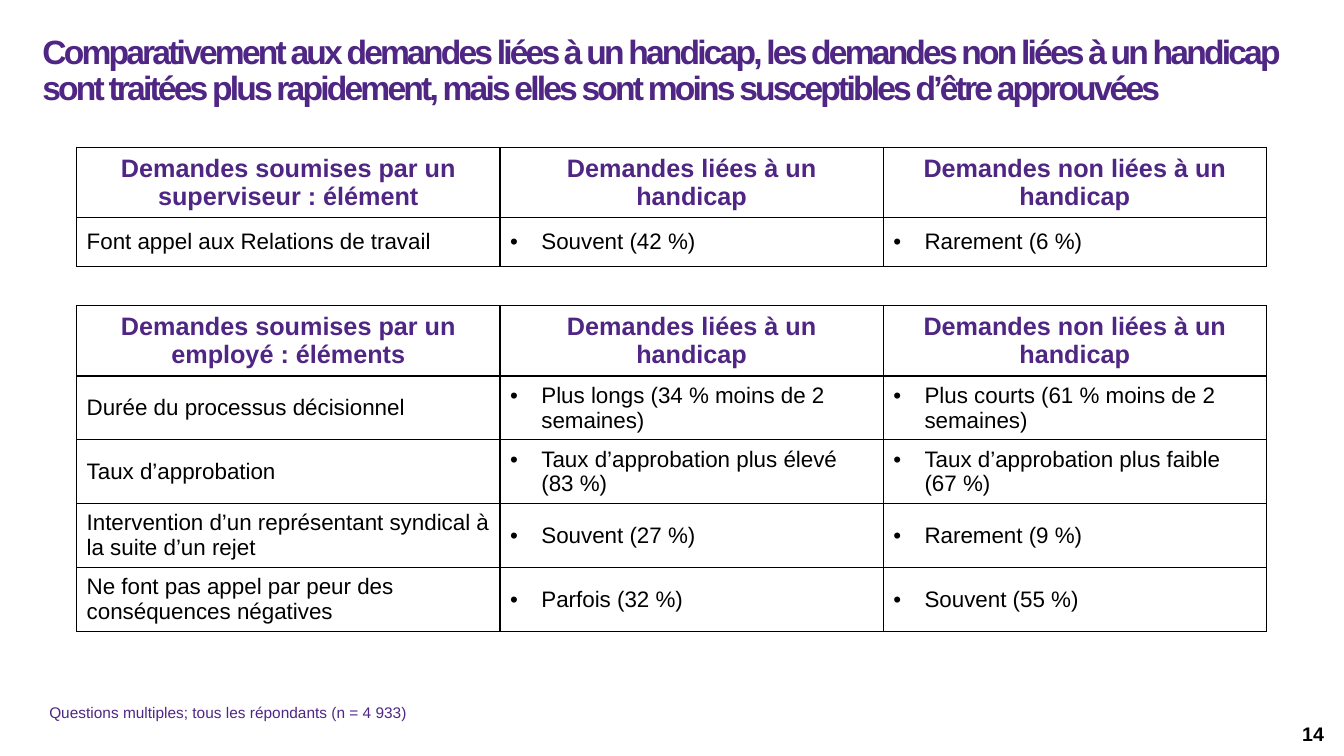
"""Build the slide comparing disability-related requests with other requests."""
from lxml import etree
from pptx import Presentation
from pptx.dml.color import RGBColor
from pptx.enum.text import MSO_ANCHOR, PP_ALIGN
from pptx.oxml.ns import qn
from pptx.util import Inches, Pt

PURPLE = RGBColor(0x4F, 0x26, 0x84)
BLACK = RGBColor(0, 0, 0)
FONT = "Arial"
LEFT, CENTER, RIGHT = PP_ALIGN.LEFT, PP_ALIGN.CENTER, PP_ALIGN.RIGHT
TOP, MIDDLE = MSO_ANCHOR.TOP, MSO_ANCHOR.MIDDLE

TABLE_LEFT = 0.76
COLUMN_WIDTHS = (4.2, 3.8, 3.8)
HEADER_HEIGHT = 0.66
REQUEST_TYPES = ("Demandes liées à un handicap", "Demandes non liées à un handicap")

TITLE = (
    "Comparativement aux demandes liées à un handicap, les demandes non liées "
    "à un handicap sont traitées plus rapidement, mais elles sont moins "
    "susceptibles d’être approuvées"
)
SUPERVISOR_ROWS = [
    ("Demandes soumises par un superviseur : élément", *REQUEST_TYPES),
    ("Font appel aux Relations de travail", "Souvent (42 %)", "Rarement (6 %)"),
]
EMPLOYEE_ROWS = [
    ("Demandes soumises par un employé : éléments", *REQUEST_TYPES),
    ("Durée du processus décisionnel",
     "Plus longs (34 % moins de 2 semaines)", "Plus courts (61 % moins de 2 semaines)"),
    ("Taux d’approbation",
     "Taux d’approbation plus élevé (83 %)", "Taux d’approbation plus faible (67 %)"),
    ("Intervention d’un représentant syndical à la suite d’un rejet",
     "Souvent (27 %)", "Rarement (9 %)"),
    ("Ne font pas appel par peur des conséquences négatives",
     "Parfois (32 %)", "Souvent (55 %)"),
]


class Page:
    """Hold the slide and the methods that draw its elements."""

    def __init__(self, deck):
        self.shapes = deck.slides.add_slide(deck.slide_layouts[6]).shapes

    def style(self, para, size, color, bold=False, align=LEFT):
        para.alignment = align
        font = para.font
        font.name, font.size, font.bold = FONT, Pt(size), bold
        font.color.rgb = color

    def text(self, area, words, size, color, bold=False, align=LEFT, anchor=TOP):
        box = self.shapes.add_textbox(*map(Inches, area))
        frame = box.text_frame
        frame.word_wrap = True
        frame.vertical_anchor = anchor
        para = frame.paragraphs[0]
        para.text = words
        self.style(para, size, color, bold, align)
        return frame

    def title(self, area, words):
        frame = self.text(area, words, 24, PURPLE, True)
        frame.margin_left = frame.margin_right = 0
        frame.margin_top = frame.margin_bottom = Inches(0.02)
        para = frame.paragraphs[0]
        para.line_spacing = 0.9
        para.runs[0].font._element.set("spc", "-200")

    def bullet(self, para):
        properties = para._p.get_or_add_pPr()
        properties.set("marL", str(Inches(0.31)))
        properties.set("indent", str(-Inches(0.31)))
        etree.SubElement(properties, qn("a:buFont"), typeface=FONT)
        etree.SubElement(properties, qn("a:buChar"), char="•")

    def border(self, cell):
        properties = cell._tc.get_or_add_tcPr()
        for side in ("lnL", "lnR", "lnT", "lnB"):
            line = etree.SubElement(properties, qn(f"a:{side}"), w=str(Pt(1)))
            fill = etree.SubElement(line, qn("a:solidFill"))
            etree.SubElement(fill, qn("a:srgbClr"), val=str(BLACK))

    def cell(self, cell, words, is_header, has_bullet):
        self.border(cell)
        cell.fill.background()
        cell.vertical_anchor = MIDDLE
        para = cell.text_frame.paragraphs[0]
        para.text = words
        if has_bullet:
            self.bullet(para)
        if is_header:
            self.style(para, 18, PURPLE, True, CENTER)
        else:
            self.style(para, 16, BLACK)

    def table(self, top, rows, row_height):
        heights = [HEADER_HEIGHT] + [row_height] * (len(rows) - 1)
        table = self.shapes.add_table(
            len(rows), len(COLUMN_WIDTHS), Inches(TABLE_LEFT), Inches(top),
            Inches(sum(COLUMN_WIDTHS)), Inches(sum(heights))).table
        table.first_row = table.horz_banding = False
        for column, width in zip(table.columns, COLUMN_WIDTHS):
            column.width = Inches(width)
        for r, (row, height) in enumerate(zip(rows, heights)):
            table.rows[r].height = Inches(height)
            for c, words in enumerate(row):
                self.cell(table.cell(r, c), words, r == 0, r > 0 and c > 0)


def main():
    deck = Presentation()
    deck.slide_width, deck.slide_height = Inches(13.33), Inches(7.5)
    page = Page(deck)
    page.title((0.42, 0.33, 12.29, 0.77), TITLE)
    page.table(1.46, SUPERVISOR_ROWS, 0.48)
    page.table(3.03, EMPLOYEE_ROWS, 0.59)
    page.text((10.23, 7.08, 3, 0.4), "14", 14, BLACK, True, RIGHT, MIDDLE)
    page.text((0.39, 6.93, 7.79, 0.29),
              "Questions multiples; tous les répondants (n = 4 933)", 11, PURPLE)
    deck.save("out.pptx")


if __name__ == "__main__":
    main()
